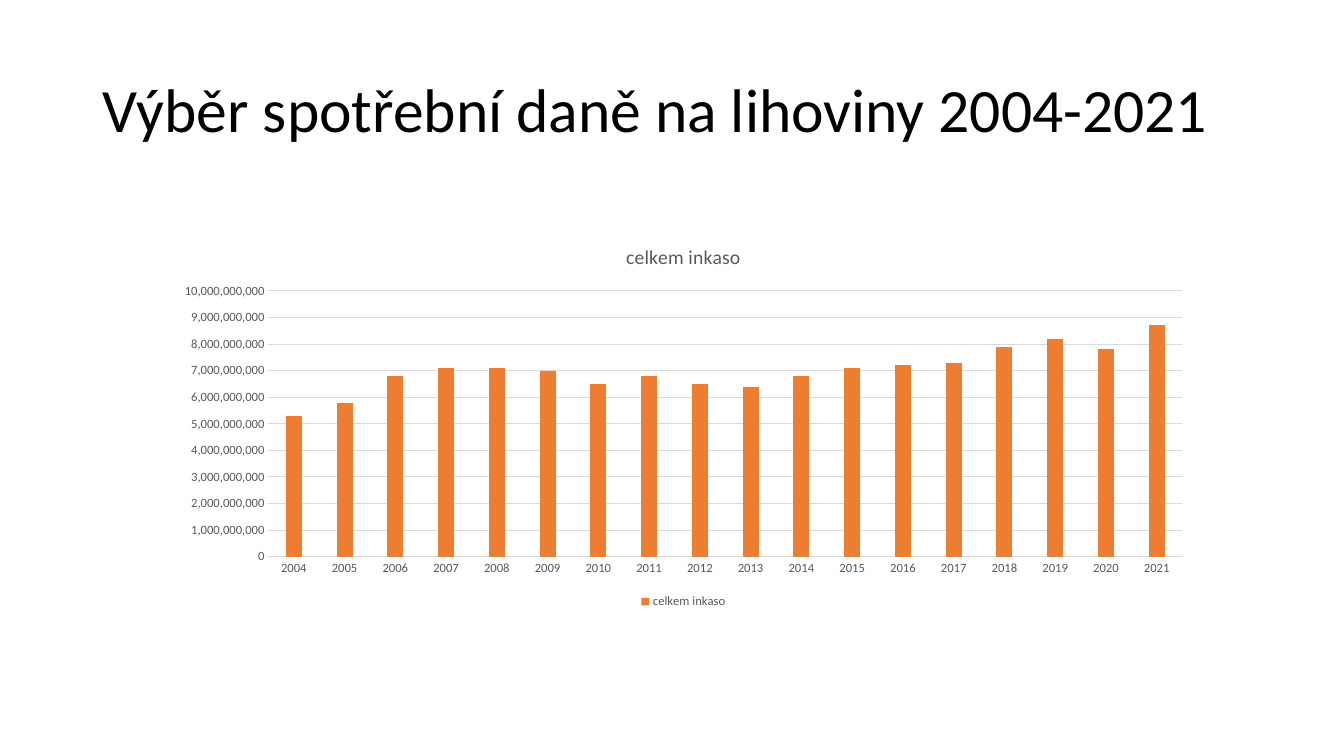
from pptx import Presentation, util as u
from pptx.chart.data import CategoryChartData
from pptx.dml.color import RGBColor
from pptx.enum import chart as ch, text

BLACK = RGBColor(0x00, 0x00, 0x00)
GREY = RGBColor(0x59, 0x59, 0x59)
LIGHT_GREY = RGBColor(0xD9, 0xD9, 0xD9)
ORANGE = RGBColor(0xED, 0x7D, 0x31)
FONT = "Calibri"

WIDTH, HEIGHT = u.Inches(13.33), u.Inches(7.5)
TITLE_BOX = (0.069, 0.053, 0.863, 0.193)  # shares of the slide's size
CHART_BOX = (0.122, 0.3, 0.773, 0.511)

FIRST_YEAR = 2004
REVENUE_BILLIONS = (5.3, 5.8, 6.8, 7.1, 7.1, 7.0, 6.5, 6.8, 6.5,
                    6.4, 6.8, 7.1, 7.2, 7.3, 7.9, 8.2, 7.8, 8.7)


def to_slide(box):
    """Turn shares of the slide into left, top, width and height."""
    return [int(share * side) for share, side in zip(box, (WIDTH, HEIGHT) * 2)]


def style_font(font, size, color):
    font.name, font.size, font.bold = FONT, u.Pt(size), False
    font.color.rgb = color


def style_line(line):
    line.color.rgb = LIGHT_GREY
    line.width = u.Pt(0.75)


def place_title(slide, box, wording):
    title = slide.shapes.title
    title.left, title.top, title.width, title.height = to_slide(box)
    frame = title.text_frame
    frame.text = wording
    frame.word_wrap = True
    frame.auto_size = text.MSO_AUTO_SIZE.NONE
    frame.vertical_anchor = text.MSO_ANCHOR.MIDDLE
    heading = frame.paragraphs[0]
    heading.alignment = text.PP_ALIGN.LEFT
    heading.line_spacing = 0.9
    style_font(heading.font, 44, BLACK)


def format_axes(chart):
    for axis in (chart.category_axis, chart.value_axis):
        axis.major_tick_mark = axis.minor_tick_mark = ch.XL_TICK_MARK.NONE
        style_font(axis.tick_labels.font, 9, GREY)
    style_line(chart.category_axis.format.line)

    amounts = chart.value_axis
    amounts.minimum_scale, amounts.maximum_scale = 0, 10 * 10**9
    amounts.major_unit = 10**9
    amounts.format.line.fill.background()
    amounts.has_major_gridlines = True
    style_line(amounts.major_gridlines.format.line)
    amounts.tick_labels.number_format = "#,##0"
    amounts.tick_labels.number_format_is_linked = False


def place_revenue_chart(slide, box, name):
    revenue = CategoryChartData(number_format="#,##0")
    revenue.categories = [str(FIRST_YEAR + i) for i in range(len(REVENUE_BILLIONS))]
    revenue.add_series(name, [round(value * 10**9) for value in REVENUE_BILLIONS])
    chart = slide.shapes.add_chart(
        ch.XL_CHART_TYPE.COLUMN_CLUSTERED, *to_slide(box), revenue).chart
    style_font(chart.font, 10, BLACK)

    chart.has_title = True
    chart.chart_title.include_in_layout = False
    heading = chart.chart_title.text_frame
    heading.text = name
    style_font(heading.paragraphs[0].font, 14, GREY)

    chart.has_legend = True
    chart.legend.position = ch.XL_LEGEND_POSITION.BOTTOM
    chart.legend.include_in_layout = False
    style_font(chart.legend.font, 9, GREY)

    format_axes(chart)
    columns = chart.plots[0]
    columns.gap_width, columns.overlap = 219, -27
    columns.vary_by_categories = False
    fill = columns.series[0].format.fill
    fill.solid()
    fill.fore_color.rgb = ORANGE


def main():
    deck = Presentation()
    deck.slide_width, deck.slide_height = WIDTH, HEIGHT
    slide = deck.slides.add_slide(deck.slide_layouts.get_by_name("Title Only"))
    place_title(slide, TITLE_BOX, "Výběr spotřební daně na lihoviny 2004-2021")
    place_revenue_chart(slide, CHART_BOX, "celkem inkaso")
    deck.save("out.pptx")


if __name__ == "__main__":
    main()
